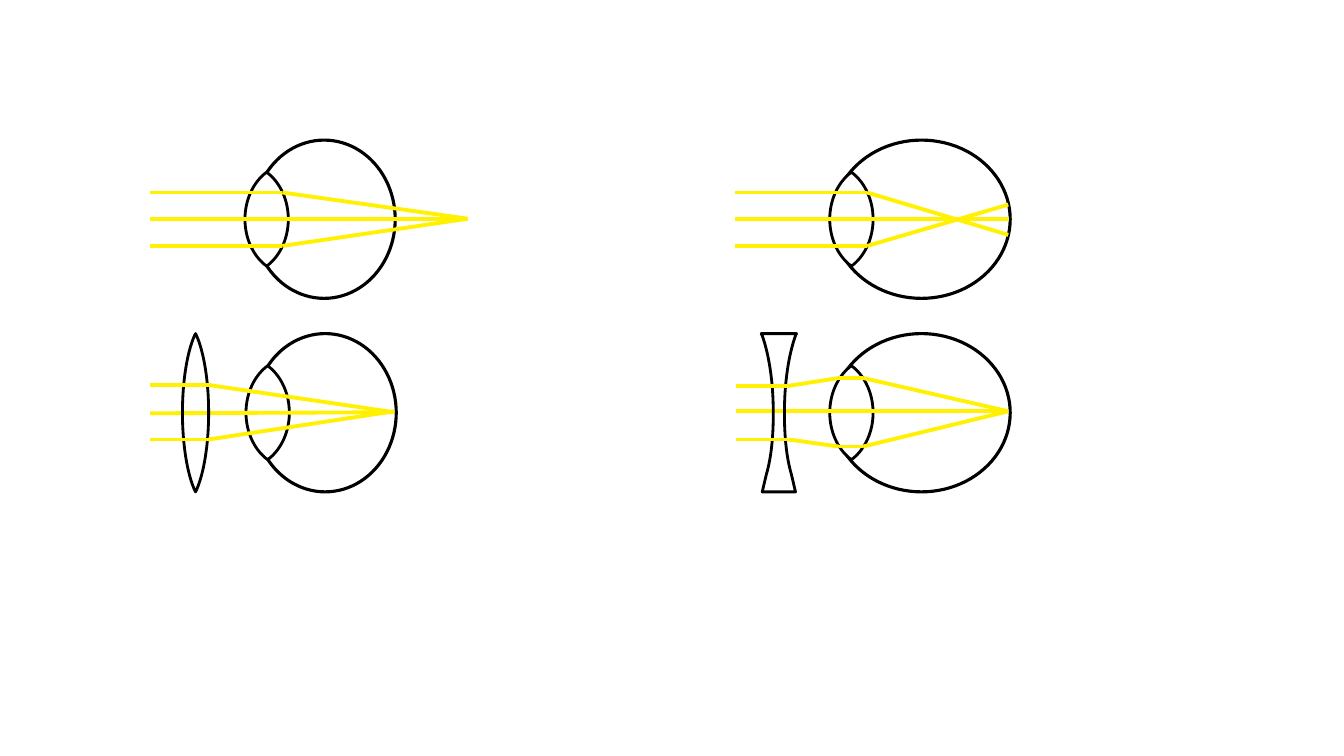
from itertools import pairwise

from lxml import etree
from pptx import Presentation
from pptx import util as u
from pptx.dml.color import RGBColor
from pptx.enum import shapes
from pptx.oxml.ns import qn

PX = 9144  # EMU per px, 100 px to the inch
BLACK, WHITE, YELLOW = "000000", "FFFFFF", "FFF101"
EYE_HEIGHT = 157
CORNEA_WIDTH, CORNEA_HEIGHT, CORNEA_DROP = 43, 93, 32


def emu(px):
    return round(px * PX)


def color(hex_string):
    return RGBColor.from_string(hex_string)


def convex_side(width, height):
    """Right side of a biconvex lens, as offsets from its top centre."""
    quarter = [(0, 1), (0.09, 0.97), (0.64, 0.76), (1, 0.4), (1, 0)]
    w, h = width / 2, height / 2
    upper = [(w * x, h - h * y) for x, y in quarter]
    lower = [(x, height - y) for x, y in reversed(upper[:-1])]
    return upper + lower


CONVEX_SIDE = convex_side(26, EYE_HEIGHT)
CONCAVE_SIDE = [(17.5, 0), (16.5, 2), (9.5, 22), (5.5, 49), (5.5, 79),
                (5.5, 102), (7.5, 123), (12.5, 140), (16.5, 157)]


def bend(sp, starts):
    """Turn each three straight segments from a start into one Bezier curve."""
    outline = sp._element.find(".//" + qn("a:path"))
    segments = list(outline)
    for i in starts:
        curve = etree.Element(qn("a:cubicBezTo"))
        segments[i].addprevious(curve)
        for segment in segments[i:i + 3]:
            curve.append(segment[0])
            outline.remove(segment)


class EyeSlide:
    def __init__(self, prs):
        self.s = prs.slides.add_slide(prs.slide_layouts[6])
        self.group = None

    def start_group(self):
        self.group = self.s.shapes.add_group_shape().shapes

    def paint(self, sp, width, fill=None):
        sp.shadow.inherit = False
        if fill:
            sp.fill.solid()
            sp.fill.fore_color.rgb = color(fill)
        else:
            sp.fill.background()
        sp.line.color.rgb = color(BLACK)
        sp.line.width = u.Pt(width)

    def eyeball(self, left, top, width):
        sp = self.group.add_shape(shapes.MSO_SHAPE.OVAL, emu(left), emu(top),
                                  emu(width), emu(EYE_HEIGHT))
        self.paint(sp, 2.25)

    def lens(self, center, top, side, fill=None):
        """Mirror a side (line, two curves, line) about a vertical axis."""
        mirrored = [(-x, y) for x, y in reversed(side) if x]
        points = [(emu(center + x), emu(top + y)) for x, y in side + mirrored]
        builder = self.group.build_freeform(*points[0])
        builder.add_line_segments(points[1:], close=True)
        sp = builder.convert_to_shape()
        back = 11 if side[-1][0] else 10  # a pointed end is not doubled
        bend(sp, (2, 5, back, back + 3))
        self.paint(sp, 2, fill)

    def ray(self, *points):
        for (x1, y1), (x2, y2) in pairwise(points):
            line = self.group.add_connector(shapes.MSO_CONNECTOR.STRAIGHT,
                                            emu(x1), emu(y1), emu(x2), emu(y2))
            line.line.color.rgb = color(YELLOW)
            line.line.width = u.Pt(2.75)
            etree.SubElement(line._element.spPr, qn("a:effectLst"))

    def eye(self, left, top, width, cornea_left, axis_ray, outer_rays, glasses=None):
        """One eye with its rays; glasses is (centre, side) of a lens."""
        self.start_group()
        self.eyeball(left, top, width)
        self.lens(cornea_left + CORNEA_WIDTH / 2, top + CORNEA_DROP,
                  convex_side(CORNEA_WIDTH, CORNEA_HEIGHT), WHITE)
        self.ray(*axis_ray)
        if glasses:
            center, side = glasses
            self.lens(center, top, side)
        for points in outer_rays:
            self.ray(*points)


def main():
    prs = Presentation()
    prs.slide_width, prs.slide_height = emu(1333), emu(750)
    slide = EyeSlide(prs)

    # Long-sighted eye, bare and corrected
    slide.eye(251, 139, 141, 243, [(149, 217), (464, 217)],
              [[(149, 191), (280, 191), (464, 217)],
               [(149, 244), (280, 244), (464, 217)]])
    slide.eye(252, 331, 141, 244, [(149, 410), (391, 409)],
              [[(149, 382), (207, 382), (391, 409)],
               [(149, 436), (207, 436), (391, 408)]],
              (194, CONVEX_SIDE))

    # Short-sighted eye, bare and corrected
    slide.eye(826, 139, 176, 823, [(729, 217), (1001, 217)],
              [[(729, 191), (860, 191), (1000, 233)],
               [(729, 244), (860, 244), (1000, 203)]])
    slide.eye(826, 331, 176, 823, [(730, 408), (1000, 408)],
              [[(730, 383), (781, 383), (832, 375), (856, 375), (1000, 408)],
               [(730, 436), (782, 436), (832, 443), (856, 443), (1000, 408)]],
              (772.5, CONCAVE_SIDE))

    prs.save("out.pptx")


if __name__ == "__main__":
    main()
